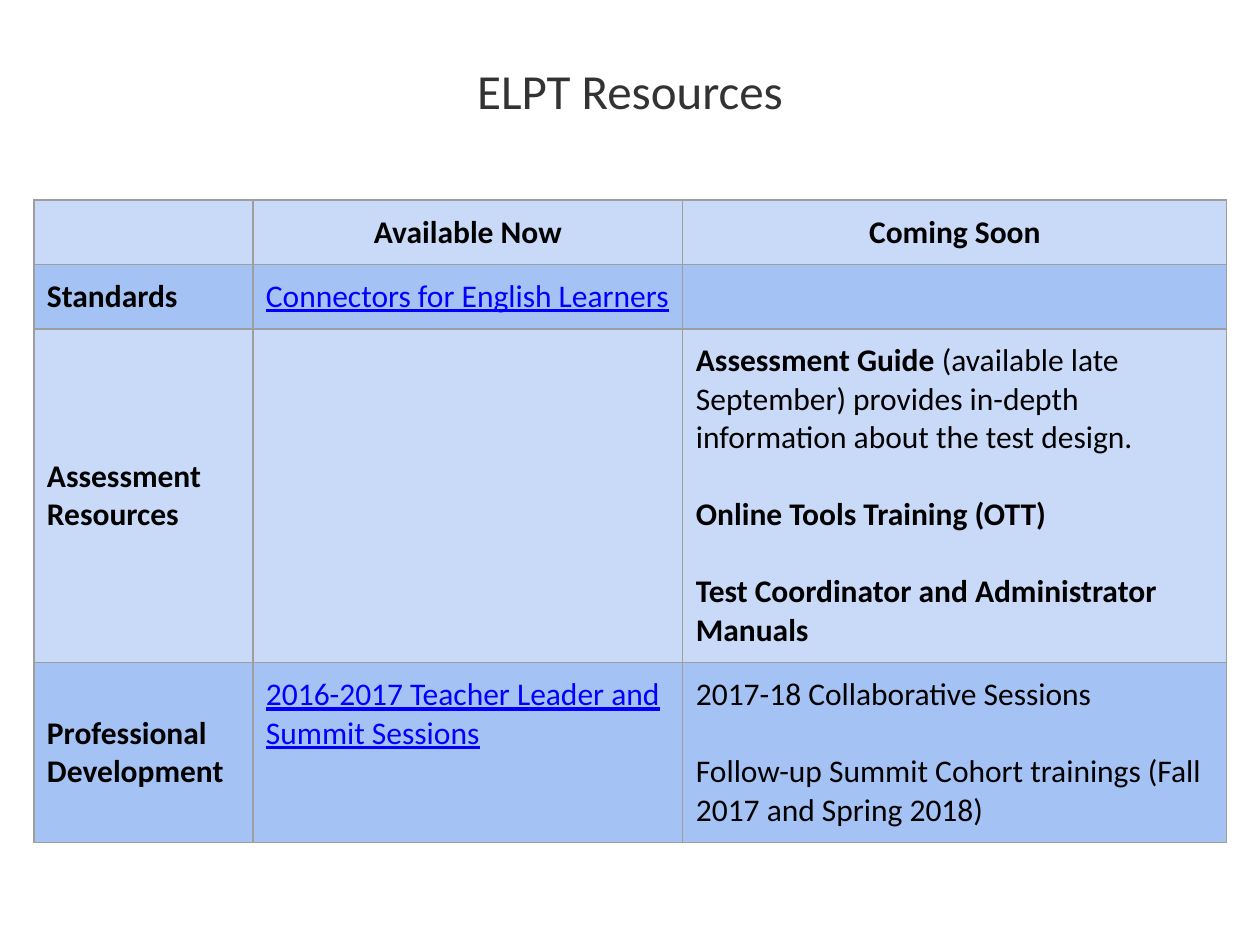
from lxml.etree import SubElement
from pptx import Presentation
from pptx.dml.color import RGBColor
from pptx.enum.text import MSO_ANCHOR, PP_ALIGN
from pptx.oxml.ns import qn
from pptx.util import Emu, Pt

EMU_PER_PX = 914400 / 126
MARGIN = 13
LINE_GAP = 22  # points, one line of body text

TITLE = {"size": Pt(28), "color": "333333"}
BOLD = {"size": Pt(18), "color": "000000", "bold": True}
PLAIN = BOLD | {"bold": False}
LINK = PLAIN | {"color": "0000FF", "underline": True}

LIGHT, DARK, BORDER = "C9DAF8", "A4C2F4", "9E9E9E"
COLUMN_WIDTHS = [219, 378, 52, 544]
ROW_HEIGHTS = [64, 64, 332, 179]

# Each cell is a list of paragraphs, each paragraph a list of (text, format) runs
ROWS = [
    ([], [[("Available Now", BOLD)]], [[("Coming Soon", BOLD)]]),
    ([[("Standards", BOLD)]], [[("Connectors for English Learners", LINK)]], []),
    (
        [[("Assessment", BOLD)], [("Resources", BOLD)]],
        [],
        [
            [("Assessment Guide ", BOLD),
             ("(available late September) provides in-depth information about the test design.", PLAIN)],
            [("Online Tools Training (OTT)", BOLD)],
            [("Test Coordinator and Administrator Manuals", BOLD)],
        ],
    ),
    (
        [[("Professional Development", BOLD)]],
        [[("2016-2017 Teacher Leader and Summit Sessions", LINK)]],
        [
            [("2017-18 Collaborative Sessions", PLAIN)],
            [("Follow-up Summit Cohort trainings (Fall 2017 and Spring 2018)", PLAIN)],
        ],
    ),
]


def px(length):
    return Emu(round(length * EMU_PER_PX))


def color(value):
    return RGBColor.from_string(value)


class SlideBuilder:
    def __init__(self, slide, font_name):
        self.slide = slide
        self.font_name = font_name

    def set_margins(self, target):
        for side in ("left", "right", "top", "bottom"):
            setattr(target, f"margin_{side}", px(MARGIN))

    def add_text(self, text_frame, paragraphs, align, gap=0):
        for index, runs in enumerate(paragraphs):
            paragraph = text_frame.add_paragraph() if index else text_frame.paragraphs[0]
            paragraph.alignment = align
            paragraph.space_before = Pt(gap if index else 0)
            for text, style in runs:
                run = paragraph.add_run()
                run.text = text
                run.font.name = self.font_name
                for name, value in style.items():
                    if name == "color":
                        run.font.color.rgb = color(value)
                    else:
                        setattr(run.font, name, value)

    def title(self, text, left, top, width, height):
        shape = self.slide.shapes.title
        shape.left, shape.top, shape.width, shape.height = map(px, (left, top, width, height))
        frame = shape.text_frame
        frame.vertical_anchor = MSO_ANCHOR.MIDDLE
        self.set_margins(frame)
        self.add_text(frame, [[(text, TITLE)]], PP_ALIGN.CENTER)

    def border(self, cell):
        properties = cell._tc.get_or_add_tcPr()
        for index, edge in enumerate(("lnL", "lnR", "lnT", "lnB")):
            line = SubElement(properties, qn(f"a:{edge}"), w=str(Pt(0.75)))
            fill = SubElement(line, qn("a:solidFill"))
            SubElement(fill, qn("a:srgbClr"), val=BORDER)
            properties.insert(index, line)  # borders come before the fill

    def table(self, left, top):
        shape = self.slide.shapes.add_table(
            len(ROW_HEIGHTS), len(COLUMN_WIDTHS), px(left), px(top),
            px(sum(COLUMN_WIDTHS)), px(sum(ROW_HEIGHTS)))
        table = shape.table
        for column, width in zip(table.columns, COLUMN_WIDTHS):
            column.width = px(width)
        for row, height in zip(table.rows, ROW_HEIGHTS):
            row.height = px(height)

        for row_index, contents in enumerate(ROWS):
            cells = list(table.rows[row_index].cells)
            for cell in cells:
                self.set_margins(cell)
                cell.fill.solid()
                cell.fill.fore_color.rgb = color(DARK if row_index % 2 else LIGHT)
                self.border(cell)
            cells[1].merge(cells[2])
            cells[0].vertical_anchor = MSO_ANCHOR.MIDDLE
            align = PP_ALIGN.LEFT if row_index else PP_ALIGN.CENTER
            for column_index, paragraphs in zip((0, 1, 3), contents):
                gap = LINE_GAP if column_index else 0
                self.add_text(cells[column_index].text_frame, paragraphs, align, gap)


def main():
    presentation = Presentation()
    presentation.slide_width, presentation.slide_height = px(1260), px(945)
    slide = presentation.slides.add_slide(presentation.slide_layouts[5])
    builder = SlideBuilder(slide, "Calibri")

    # Heading
    builder.title("ELPT Resources", 0, 0, 1260, 179)
    # Resource overview
    builder.table(34, 200)

    presentation.save("out.pptx")


if __name__ == "__main__":
    main()
